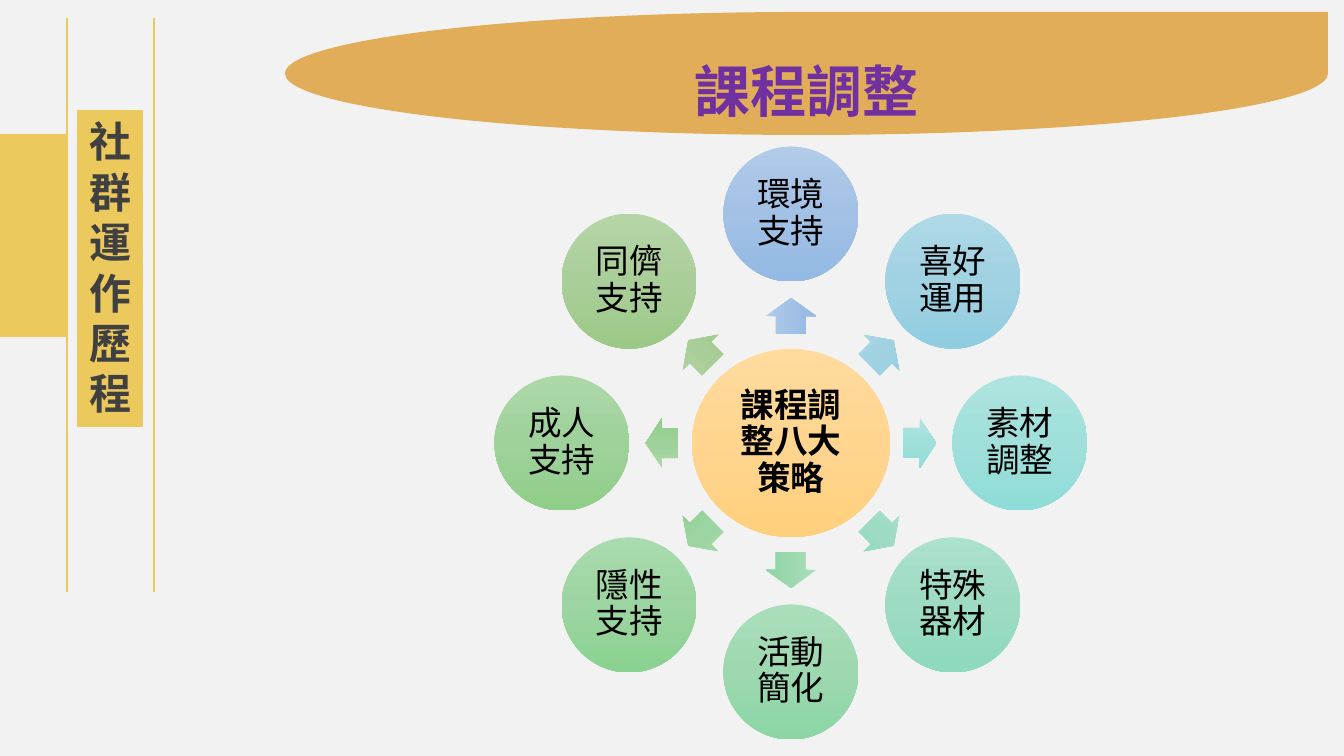
import math

from lxml import etree
from pptx import Presentation
from pptx.dml.color import RGBColor
from pptx.enum.shapes import MSO_CONNECTOR, MSO_SHAPE
from pptx.enum.text import MSO_ANCHOR, MSO_AUTO_SIZE, PP_ALIGN
from pptx.oxml.ns import qn
from pptx.util import Emu, Pt

RECTANGLE = MSO_SHAPE.RECTANGLE
ELLIPSE = MSO_SHAPE.OVAL
TEARDROP = MSO_SHAPE.TEAR
ARROW = MSO_SHAPE.RIGHT_ARROW
STRAIGHT = MSO_CONNECTOR.STRAIGHT
TOP = MSO_ANCHOR.TOP
MIDDLE = MSO_ANCHOR.MIDDLE
CENTER = PP_ALIGN.CENTER
GROW = MSO_AUTO_SIZE.SHAPE_TO_FIT_TEXT

PX = 914400 / 100.8
FONT = "Noto Sans CJK SC"
GOLD = "ECC95D"
HUB_X, HUB_Y = 791, 443
ORBIT = 229
BUBBLE = 135
HUB_COLORS = ("FFDB9E", "FFD590", "FFD07C")

# Clockwise from the top: label and gradient colours
STRATEGIES = [
    ("環境支持", ("B1CBE9", "A3C1E5", "93B9E4")),
    ("喜好運用", ("AFD9E7", "A1D2E2", "90CDE1")),
    ("素材調整", ("ADE4E0", "A0DFDA", "8EDDD8")),
    ("特殊器材", ("ACE1CC", "9EDBC3", "8DDABC")),
    ("活動簡化", ("AADEBB", "9DD8B0", "8BD6A4")),
    ("隱性支持", ("A9DBAE", "9CD5A1", "89D290")),
    ("成人支持", ("ACD8A8", "9FD19B", "8FCE88")),
    ("同儕支持", ("B5D5A7", "AACE9A", "9CC987")),
]


def emu(pixels):
    return Emu(round(pixels * PX))


def color(value):
    return RGBColor.from_string(value)


def add_shape(slide, kind, left, top, width, height, fill=None, line=None, line_width=1):
    shape = slide.shapes.add_shape(kind, emu(left), emu(top), emu(width), emu(height))
    shape.shadow.inherit = False
    if fill:
        shape.fill.solid()
        shape.fill.fore_color.rgb = color(fill)
    if line:
        shape.line.color.rgb = color(line)
        shape.line.width = Pt(line_width)
    else:
        shape.line.fill.background()
    return shape


def set_gradient(shape, colors):
    """Fill from top to bottom with evenly spaced stops."""
    shape.fill.gradient()
    gradient = shape._element.spPr.find(qn("a:gradFill"))
    for child in list(gradient):
        gradient.remove(child)
    gradient.set("rotWithShape", "1")
    stops = etree.SubElement(gradient, qn("a:gsLst"))
    for index, value in enumerate(colors):
        stop = etree.SubElement(stops, qn("a:gs"), pos=str(index * 50000))
        etree.SubElement(stop, qn("a:srgbClr"), val=value)
    etree.SubElement(gradient, qn("a:lin"), ang="5400000", scaled="0")


def set_text(shape, text, size=24, fill="000000", bold=False, spacing=None,
             anchor=MIDDLE, inset=None):
    frame = shape.text_frame
    frame.word_wrap = True
    frame.vertical_anchor = anchor
    if inset is not None:
        frame.margin_left = frame.margin_right = emu(inset)
        frame.margin_top = frame.margin_bottom = emu(inset)
    paragraph = frame.paragraphs[0]
    paragraph.alignment = CENTER
    if spacing:
        paragraph.line_spacing = spacing
    run = paragraph.add_run()
    run.text = text
    run.font.name = FONT
    run.font.size = Pt(size)
    run.font.bold = bold
    run.font.color.rgb = color(fill)
    etree.SubElement(run._r.get_or_add_rPr(), qn("a:ea"), typeface=FONT)


def add_rule(slide, x, top, bottom):
    rule = slide.shapes.add_connector(STRAIGHT, emu(x), emu(bottom), emu(x), emu(top))
    rule.line.color.rgb = color(GOLD)
    rule.line.width = Pt(2)
    etree.SubElement(rule._element.spPr, qn("a:effectLst"))


def add_bubble(slide, x, y, width, height, text, colors, bold=False):
    bubble = add_shape(slide, ELLIPSE, x - width / 2, y - height / 2, width, height)
    set_gradient(bubble, colors)
    set_text(bubble, text, bold=bold, spacing=0.9, inset=4)


def add_spoke(slide, angle, text, colors):
    """One arrow and its bubble; the angle runs clockwise from the right."""
    across, down = math.cos(math.radians(angle)), math.sin(math.radians(angle))
    # The hub is slightly flat, so upright arrows are longer and closer in
    length = 33 + 3 * down ** 2
    distance = 129 - 2 * down ** 2
    width = 50
    arrow = add_shape(slide, ARROW, HUB_X + distance * across - length / 2,
                      HUB_Y + distance * down - width / 2, length, width)
    arrow.adjustments[0] = 0.6
    arrow.adjustments[1] = 0.5
    arrow.rotation = angle % 360
    set_gradient(arrow, colors)
    add_bubble(slide, HUB_X + ORBIT * across, HUB_Y + ORBIT * down,
               BUBBLE, BUBBLE, text, colors)


def add_sidebar(slide):
    add_rule(slide, 154, 18, 592)
    label = add_shape(slide, RECTANGLE, 78, 111, 65, 316, GOLD, GOLD, 0.75)
    set_text(label, "社群運作歷程", size=30, fill="404040", bold=True, anchor=TOP)
    label.text_frame.auto_size = GROW
    add_shape(slide, RECTANGLE, 0, 135, 67, 201, GOLD, GOLD)
    add_rule(slide, 67, 18, 592)


def main():
    presentation = Presentation()
    presentation.slide_width = emu(1344)
    presentation.slide_height = emu(756)
    slide = presentation.slides.add_slide(presentation.slide_layouts[6])
    slide.background.fill.solid()
    slide.background.fill.fore_color.rgb = color("F2F2F2")

    add_sidebar(slide)

    # Title
    title = add_shape(slide, TEARDROP, 285, 12, 1043, 123, "E1AD58")
    set_text(title, "課程調整", size=40, fill="7030A0", bold=True, spacing=1.5)

    # Hub and its eight strategies
    add_bubble(slide, HUB_X, HUB_Y, 198, 188, "課程調整八大策略", HUB_COLORS, bold=True)
    step = 360 // len(STRATEGIES)
    for index, (text, colors) in enumerate(STRATEGIES):
        add_spoke(slide, index * step - 90, text, colors)

    presentation.save("out.pptx")


if __name__ == "__main__":
    main()
